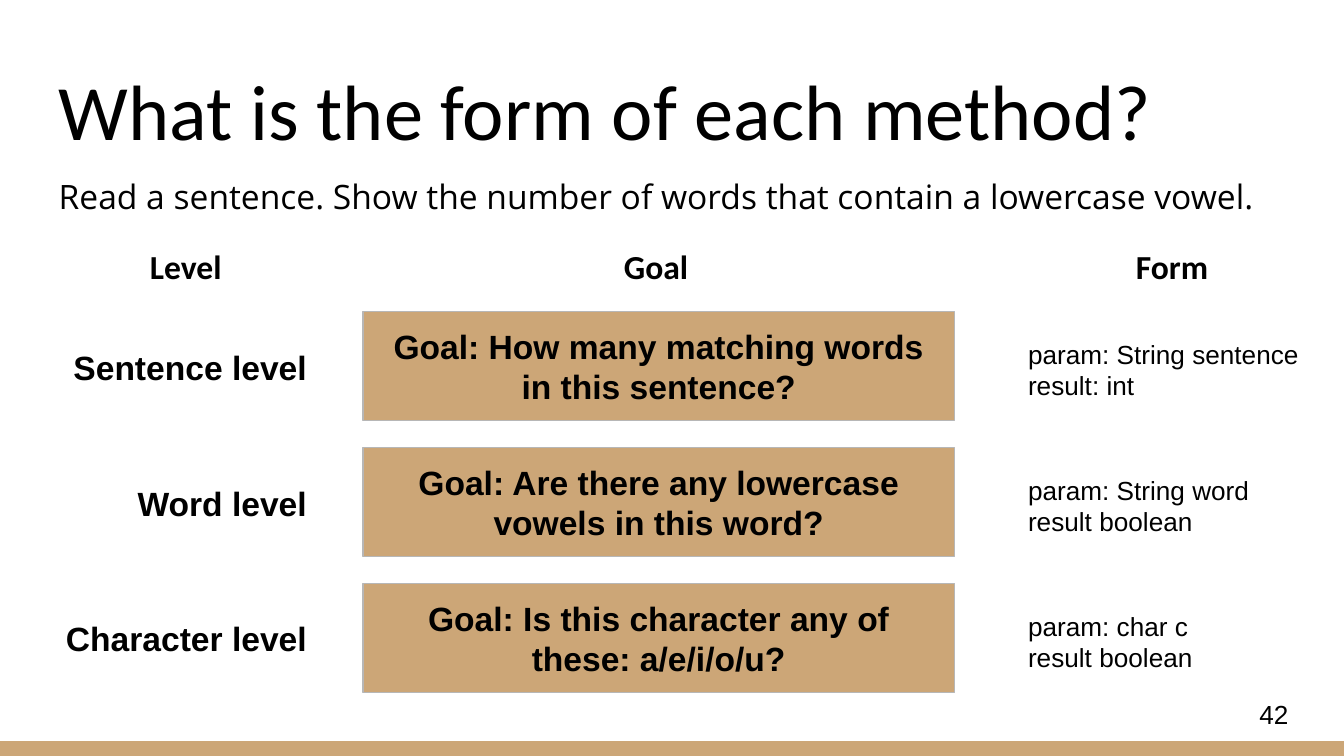
from dataclasses import dataclass

import pptx
import pptx.dml.color
import pptx.enum.shapes
import pptx.enum.text
import pptx.util
from pptx.util import Cm

ALIGN = pptx.enum.text.PP_ALIGN
ANCHOR = pptx.enum.text.MSO_ANCHOR


@dataclass(frozen=True)
class Theme:
    ink: str = "000000"
    tan: str = "CCA677"
    outline: str = "B7B7B7"
    heading_font: str = "Calibri"
    prompt_font: str = "Open Sans"
    body_font: str = "Arial"
    title_size: int = 42
    text_size: int = 18
    small_size: int = 14
    inset: float = 0.25


THEME = Theme()

TITLE = "What is the form of each method?"
PROMPT = "Read a sentence. Show the number of words that contain a lowercase vowel."
PAGE_NUMBER = "42"
METHODS = [
    ("Sentence level", "Goal: How many matching words in this sentence?",
     "param: String sentence\nresult: int"),
    ("Word level", "Goal: Are there any lowercase vowels in this word?",
     "param: String word\nresult boolean"),
    ("Character level", "Goal: Is this character any of these: a/e/i/o/u?",
     "param: char c\nresult boolean"),
]


def rgb(value):
    return pptx.dml.color.RGBColor.from_string(value)


def write(holder, text, font=THEME.body_font, size=THEME.text_size, bold=False,
          align=ALIGN.LEFT, anchor=ANCHOR.TOP):
    """Fill a shape with text, one paragraph per line."""
    frame = holder.text_frame
    frame.word_wrap = True
    frame.vertical_anchor = anchor
    frame.margin_left = frame.margin_right = Cm(THEME.inset)
    frame.margin_top = frame.margin_bottom = Cm(THEME.inset)
    frame.text = text
    for paragraph in frame.paragraphs:
        paragraph.alignment = align
        for run in paragraph.runs:
            run.font.name = font
            run.font.size = pptx.util.Pt(size)
            run.font.bold = bold
            run.font.color.rgb = rgb(THEME.ink)


def add_text(slide, box, text, **style):
    holder = slide.shapes.add_textbox(*map(Cm, box))
    write(holder, text, **style)
    return holder


def add_block(slide, box):
    block = slide.shapes.add_shape(
        pptx.enum.shapes.MSO_SHAPE.RECTANGLE, *map(Cm, box))
    block.shadow.inherit = False
    block.fill.solid()
    block.fill.fore_color.rgb = rgb(THEME.tan)
    block.line.fill.background()
    return block


def add_header(slide, box):
    left, top, width, height = box
    title_height = 2.31
    add_text(slide, (left, top, width, title_height), TITLE,
             font=THEME.heading_font, size=THEME.title_size, anchor=ANCHOR.BOTTOM)
    prompt_top = top + 2.08
    prompt = add_text(slide, (left, prompt_top, width, top + height - prompt_top),
                      PROMPT, font=THEME.prompt_font)
    paragraph = prompt.text_frame.paragraphs[0]
    paragraph.line_spacing = 1.15
    paragraph.space_after = pptx.util.Pt(16)


def add_column_headings(slide, box):
    left, top, _, height = box
    for offset, heading in ((0, "Level"), (8.89, "Goal"), (18.64, "Form")):
        add_text(slide, (left + offset, top, 5.08, height), heading,
                 font=THEME.heading_font, bold=True, align=ALIGN.CENTER)


def add_method_row(slide, box, level, goal, form):
    left, top, width, height = box
    goal_block = add_block(slide, (left + 5.89, top, 11.18, height))
    goal_block.line.color.rgb = rgb(THEME.outline)
    goal_block.line.width = pptx.util.Pt(0.75)
    write(goal_block, goal, bold=True, align=ALIGN.CENTER, anchor=ANCHOR.MIDDLE)
    add_text(slide, (left, top + 0.41, 5.08, 1.3), level,
             bold=True, align=ALIGN.RIGHT)
    form_width = 6.05
    add_text(slide, (left + width - form_width, top + 0.25, form_width, 1.3), form,
             size=THEME.small_size)


def add_method_rows(slide, box):
    left, top, width, height = box
    row_height = 2.06
    pitch = (height - row_height) / (len(METHODS) - 1)
    for index, method in enumerate(METHODS):
        add_method_row(slide, (left, top + index * pitch, width, row_height), *method)


def add_footer(slide, box):
    """Place the page number above a band along the bottom of the box."""
    left, top, width, height = box
    band_height = 0.28
    add_block(slide, (left, top + height - band_height, width, band_height))
    add_text(slide, (left + width - 1.85, top, 1.52, 1.09), PAGE_NUMBER,
             size=THEME.small_size, anchor=ANCHOR.MIDDLE)


def main():
    deck = pptx.Presentation()
    deck.slide_width, deck.slide_height = Cm(25.4), Cm(14.29)
    slide = deck.slides.add_slide(deck.slide_layouts[6])
    add_footer(slide, (0, 12.95, 25.4, 1.34))
    add_header(slide, (0.86, 0.89, 23.67, 3.43))
    add_column_headings(slide, (0.97, 4.39, 23.72, 1.3))
    add_method_rows(slide, (0.97, 5.89, 24.26, 7.2))
    deck.save("out.pptx")


if __name__ == "__main__":
    main()
